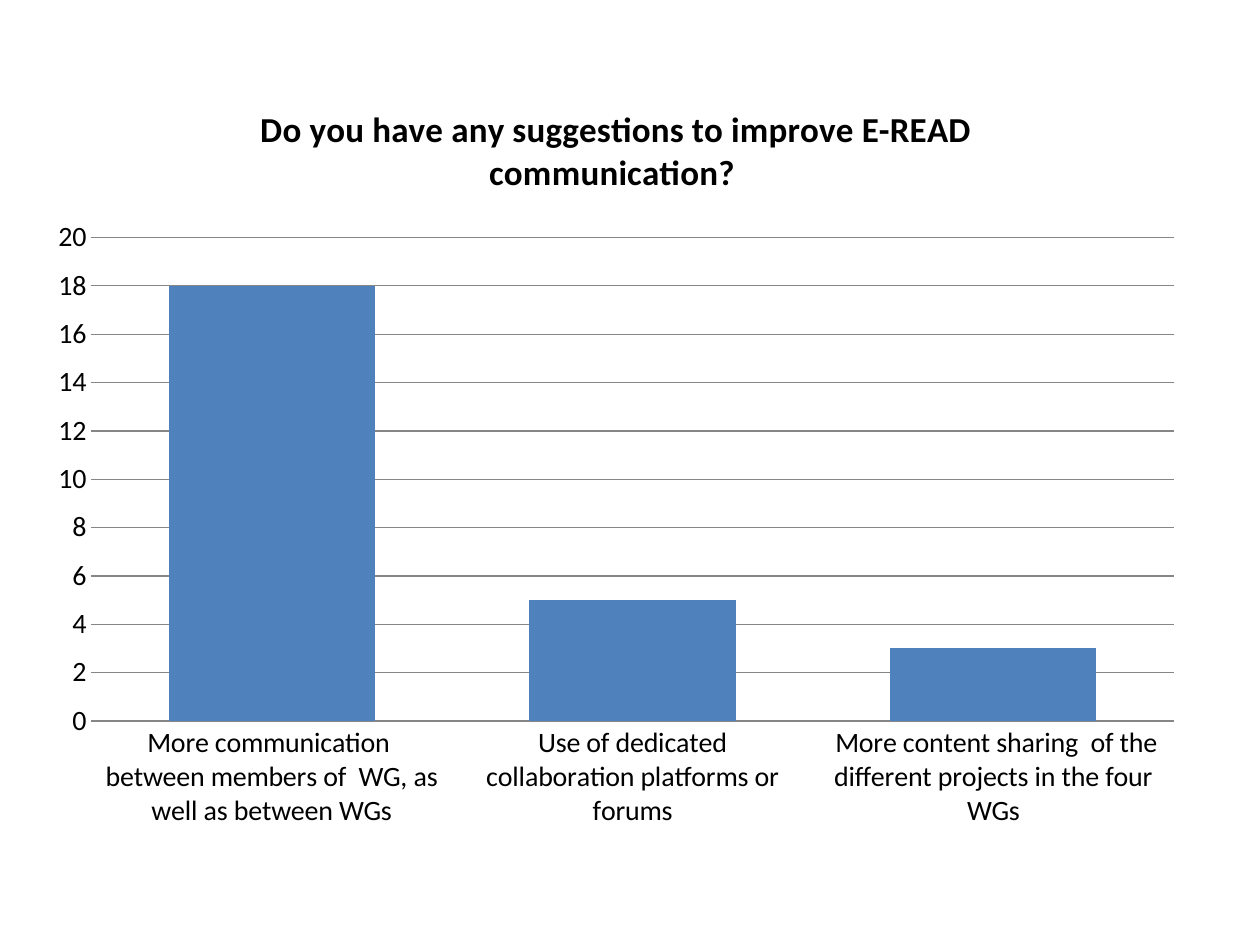
from dataclasses import dataclass
from typing import Any

import pptx
import pptx.chart.data
import pptx.dml.color
import pptx.enum.chart
import pptx.util

Cm = pptx.util.Cm
Pt = pptx.util.Pt
BLACK = pptx.dml.color.RGBColor(0x00, 0x00, 0x00)
BLUE = pptx.dml.color.RGBColor(0x4F, 0x81, 0xBD)
GRAY = pptx.dml.color.RGBColor(0x86, 0x86, 0x86)
NO_TICK = pptx.enum.chart.XL_TICK_MARK.NONE
TITLE = "Do you have any suggestions to improve E-READ communication? "


@dataclass(frozen=True)
class Suggestion:
    label: str
    votes: int


SUGGESTIONS = [
    Suggestion("More communication  between members of  WG, as well as between WGs", 18),
    Suggestion("Use of dedicated collaboration platforms or forums", 5),
    Suggestion(" More content sharing  of the different projects in the four WGs", 3),
]


def apply(obj: Any, values: dict[str, Any]) -> None:
    for name, value in values.items():
        setattr(obj, name, value)


def style_font(font: Any, size: int, bold: bool) -> None:
    apply(font, {"name": "Calibri", "size": Pt(size), "bold": bold})
    font.color.rgb = BLACK


def style_line(line: Any) -> None:
    line.color.rgb = GRAY
    line.width = Pt(0.75)


def add_title(chart: Any, text: str) -> None:
    chart.has_title = True
    tf = chart.chart_title.text_frame
    r = tf.paragraphs[0].add_run()
    r.text = text
    style_font(r.font, 20, True)
    chart.chart_title.include_in_layout = False


def add_suggestion_chart(s: Any, suggestions: list[Suggestion]) -> None:
    data = pptx.chart.data.CategoryChartData()
    data.categories = [item.label for item in suggestions]
    data.add_series("Series 1", [item.votes for item in suggestions])
    chart = s.shapes.add_chart(
        pptx.enum.chart.XL_CHART_TYPE.COLUMN_CLUSTERED,
        Cm(0.71), Cm(1.52), Cm(23.42), Cm(15.49), data,
    ).chart
    chart.has_legend = False
    style_font(chart.font, 16, False)
    add_title(chart, TITLE)

    plot = chart.plots[0]
    apply(plot, {"gap_width": 75, "overlap": -25, "vary_by_categories": False})
    fill = plot.series[0].format.fill
    fill.solid()
    fill.fore_color.rgb = BLUE

    ticks = {"major_tick_mark": NO_TICK, "minor_tick_mark": NO_TICK}
    apply(chart.category_axis, {**ticks, "has_major_gridlines": False})
    style_line(chart.category_axis.format.line)
    apply(chart.value_axis, {
        **ticks, "has_major_gridlines": True,
        "minimum_scale": 0, "maximum_scale": 20, "major_unit": 2,
    })
    chart.value_axis.format.line.fill.background()
    style_line(chart.value_axis.major_gridlines.format.line)


def main() -> None:
    prs = pptx.Presentation()
    apply(prs, {"slide_width": Cm(25.4), "slide_height": Cm(19.05)})
    s = prs.slides.add_slide(prs.slide_layouts[6])
    add_suggestion_chart(s, SUGGESTIONS)
    prs.save("out.pptx")


if __name__ == "__main__":
    main()
